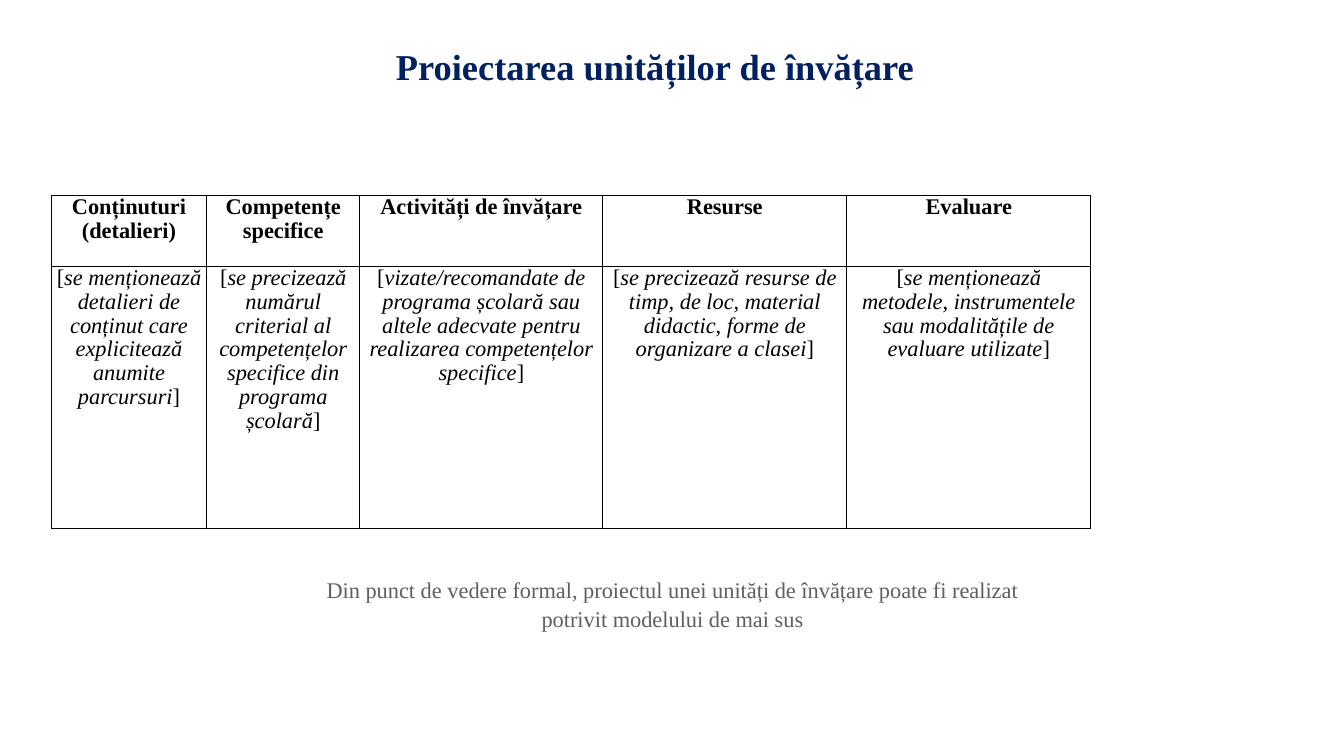
from pptx import Presentation
from pptx import util as u
from pptx.dml.color import RGBColor
from pptx.enum import text
from pptx.oxml import parse_xml
from pptx.oxml.ns import nsdecls

FONT = "Times New Roman"
COLORS = {"title": "002060", "note": "5F5F5F", "ink": "000000"}
WIDTHS = [1.54, 1.52, 2.41, 2.42, 2.42]
HEIGHTS = [0.7, 2.6]
HEADS = ["Conținuturi\n(detalieri)", "Competențe specifice",
         "Activități de învățare", "Resurse", "Evaluare"]
HINTS = [
    "se menționează detalieri de conținut care explicitează anumite parcursuri",
    "se precizează numărul criterial al competențelor specifice din programa școlară",
    "vizate/recomandate de programa școlară sau altele adecvate pentru "
    "realizarea competențelor specifice",
    "se precizează resurse de timp, de loc, material didactic, "
    "forme de organizare a clasei",
    "se menționează metodele, instrumentele sau modalitățile de evaluare utilizate",
]


def style(frame, size, color, bold=False, space=1.0):
    frame.word_wrap = True
    for para in frame.paragraphs:
        para.alignment = text.PP_ALIGN.CENTER
        para.line_spacing = space
        for run in para.runs:
            run.font.name = FONT
            run.font.size = u.Pt(size)
            run.font.bold = bold
            run.font.color.rgb = RGBColor.from_string(COLORS[color])


def add_text(slide, box, words, size, color, bold=False):
    frame = slide.shapes.add_textbox(*map(u.Inches, box)).text_frame
    frame.text = words
    style(frame, size, color, bold, 1.07)
    frame.auto_size = text.MSO_AUTO_SIZE.SHAPE_TO_FIT_TEXT


def add_hint(frame, hint):
    para = frame.paragraphs[0]
    for part in ("[", hint, "]"):
        run = para.add_run()
        run.text = part
        run.font.italic = part == hint


def format_cell(cell):
    cell.margin_left = cell.margin_right = u.Inches(0.05)
    cell.margin_top = cell.margin_bottom = 0
    # Borders come before the fill in the cell properties
    props = cell._tc.get_or_add_tcPr()
    for side in ("lnL", "lnR", "lnT", "lnB"):
        props.append(parse_xml(
            f'<a:{side} {nsdecls("a")} w="12700"><a:solidFill>'
            f'<a:srgbClr val="{COLORS["ink"]}"/></a:solidFill></a:{side}>'))
    cell.fill.background()


def add_plan(slide, left, top):
    table = slide.shapes.add_table(
        len(HEIGHTS), len(WIDTHS), u.Inches(left), u.Inches(top),
        u.Inches(sum(WIDTHS)), u.Inches(sum(HEIGHTS))).table
    table.horz_banding = False
    for row, high in zip(table.rows, HEIGHTS):
        row.height = u.Inches(high)
    for col, (wide, head, hint) in enumerate(zip(WIDTHS, HEADS, HINTS)):
        table.columns[col].width = u.Inches(wide)
        top_cell, low_cell = table.cell(0, col), table.cell(1, col)
        top_cell.text_frame.text = head
        add_hint(low_cell.text_frame, hint)
        for cell in (top_cell, low_cell):
            format_cell(cell)
            style(cell.text_frame, 16, "ink", cell is top_cell, 0.96)


def main():
    deck = Presentation()
    deck.slide_width, deck.slide_height = u.Inches(13.33), u.Inches(7.5)
    slide = deck.slides.add_slide(deck.slide_layouts[6])

    # Unit plan table
    add_plan(slide, 0.51, 1.94)

    # Note and title
    add_text(slide, (3.05, 5.65, 7.24, 0.64),
             "Din punct de vedere formal, proiectul unei unități de învățare "
             "poate fi realizat potrivit modelului de mai sus", 16, "note")
    add_text(slide, (2.48, 0.36, 8.04, 0.54),
             "Proiectarea unităților de învățare", 26, "title", True)
    deck.save("out.pptx")


if __name__ == "__main__":
    main()
